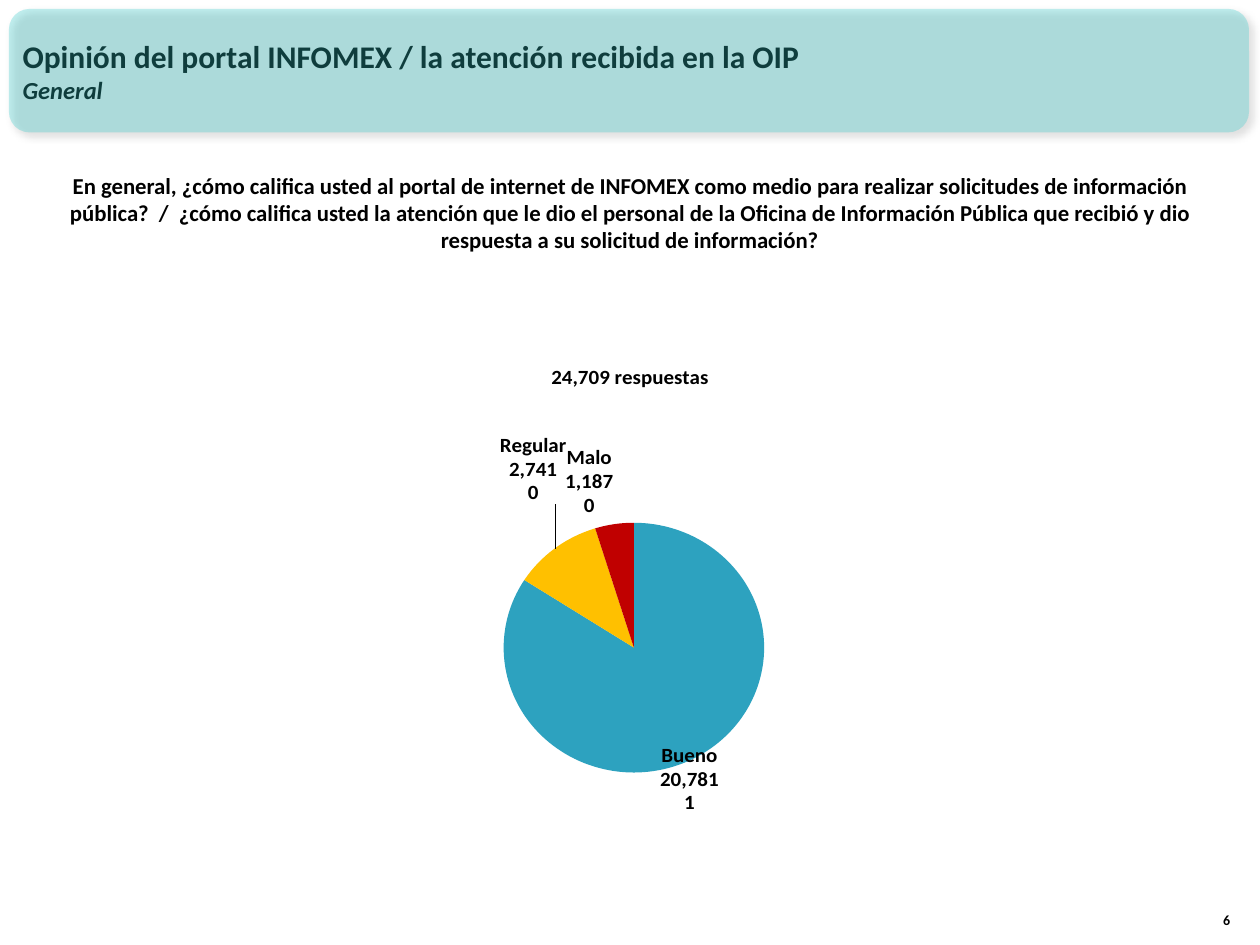
from dataclasses import dataclass

from lxml import etree
from pptx import Presentation
from pptx.chart.data import CategoryChartData
from pptx.dml.color import RGBColor
from pptx.enum.chart import XL_CHART_TYPE, XL_LABEL_POSITION
from pptx.enum.shapes import MSO_SHAPE
from pptx.enum.text import MSO_ANCHOR, PP_ALIGN
from pptx.oxml import parse_xml
from pptx.oxml.ns import nsdecls, qn
from pptx.util import Cm, Pt

PIE = XL_CHART_TYPE.PIE
OUTSIDE = XL_LABEL_POSITION.OUTSIDE_END
ROUNDED = MSO_SHAPE.ROUNDED_RECTANGLE
MIDDLE, TOP, BOTTOM = MSO_ANCHOR.MIDDLE, MSO_ANCHOR.TOP, MSO_ANCHOR.BOTTOM
LEFT, CENTER, RIGHT = PP_ALIGN.LEFT, PP_ALIGN.CENTER, PP_ALIGN.RIGHT


@dataclass(frozen=True)
class Theme:
    font: str = "Calibri"
    text: str = "000000"
    banner: str = "33CCCC"
    title: int = 18
    subtitle: int = 14
    question: int = 13
    chart: int = 12
    page: int = 8


@dataclass(frozen=True)
class Box:
    left: float
    top: float
    width: float
    height: float

    def lengths(self) -> tuple:
        return Cm(self.left), Cm(self.top), Cm(self.width), Cm(self.height)


@dataclass(frozen=True)
class Rating:
    name: str
    count: int
    color: str
    shift: tuple = (0, 0)


THEME = Theme()
RATINGS = [
    Rating("Bueno", 20781, "2DA2BF", (-0.05, -0.03)),
    Rating("Regular", 2741, "FFC000", (0.02, -0.08)),
    Rating("Malo", 1187, "C00000"),
]
ANSWERS = "24,709 respuestas"
QUESTION = (
    "En general, ¿cómo califica usted al portal de internet de INFOMEX como medio "
    "para realizar solicitudes de información pública?  /  ¿cómo califica usted la "
    "atención que le dio el personal de la Oficina de Información Pública que recibió "
    "y dio respuesta a su solicitud de información?"
)


def style_font(font, size: int, italic: bool = False) -> None:
    font.name, font.size = THEME.font, Pt(size)
    font.bold, font.italic = True, italic
    font.color.rgb = RGBColor.from_string(THEME.text)


def write_line(p, text: str, size: int, align, italic: bool = False) -> None:
    p.text, p.alignment = text, align
    style_font(p.font, size, italic)


def add_banner(s, box: Box) -> None:
    """Draw the translucent header with its soft shadow."""
    sp = s.shapes.add_shape(ROUNDED, *box.lengths())
    sp.line.fill.background()
    sp.fill.solid()
    sp.fill.fore_color.rgb = RGBColor.from_string(THEME.banner)
    color = sp.fill._xPr.find(".//" + qn("a:srgbClr"))
    etree.SubElement(color, qn("a:alpha"), val="30000")
    sp._element.spPr.append(parse_xml(
        f'<a:effectLst {nsdecls("a")}><a:outerShdw blurRad="50800" dist="38100" '
        'dir="2700000" algn="tl" rotWithShape="0"><a:srgbClr val="000000">'
        '<a:alpha val="40000"/></a:srgbClr></a:outerShdw></a:effectLst>'))


def add_title(s, box: Box, title: str, subtitle: str) -> None:
    sp = s.shapes.title
    sp.left, sp.top, sp.width, sp.height = box.lengths()
    tf = sp.text_frame
    tf.word_wrap, tf.vertical_anchor = True, MIDDLE
    write_line(tf.paragraphs[0], title, THEME.title, LEFT)
    write_line(tf.add_paragraph(), subtitle, THEME.subtitle, LEFT, italic=True)


def add_text(s, box: Box, text: str, size: int, align, anchor) -> None:
    tf = s.shapes.add_textbox(*box.lengths()).text_frame
    tf.word_wrap, tf.vertical_anchor = True, anchor
    write_line(tf.paragraphs[0], text, size, align)


def manual_layout(inner: bool = False, **values: float):
    """Build a c:layout; an inner one is placed from the chart's edges."""
    layout = etree.Element(qn("c:layout"))
    manual = etree.SubElement(layout, qn("c:manualLayout"))
    if inner:
        for tag, val in (("layoutTarget", "inner"), ("xMode", "edge"), ("yMode", "edge")):
            etree.SubElement(manual, qn(f"c:{tag}"), val=val)
    for tag, val in values.items():
        etree.SubElement(manual, qn(f"c:{tag}"), val=str(val))
    return layout


def show_parts(label) -> None:
    """Show category, value and percentage, each on its own line."""
    for tag in ("showVal", "showCatName", "showPercent"):
        label.find(qn(f"c:{tag}")).set("val", "1")
    separator = etree.Element(qn("c:separator"))
    separator.text = "\n"
    label.find(qn("c:showBubbleSize")).addnext(separator)


def add_pie(s, box: Box, ratings: list[Rating]) -> None:
    data = CategoryChartData(number_format="#,##0")
    data.categories = [r.name for r in ratings]
    data.add_series(ANSWERS, [r.count for r in ratings])
    chart = s.shapes.add_chart(PIE, *box.lengths(), data).chart
    style_font(chart.font, THEME.chart)
    chart.has_legend = False
    chart.has_title = True
    p = chart.chart_title.text_frame.paragraphs[0]
    write_line(p, ANSWERS, THEME.chart, CENTER)

    plot = chart.plots[0]
    plot.vary_by_categories = True
    area = plot._element.getparent()
    for old in area.findall(qn("c:layout")):
        area.remove(old)
    area.insert(0, manual_layout(True, x=0.23, y=0.38, w=0.55, h=0.53))

    series = plot.series[0]
    labels = series.data_labels
    labels.number_format, labels.number_format_is_linked = "#,##0", False
    labels.position = OUTSIDE
    style_font(labels.font, THEME.chart)
    show_parts(labels._element)
    for i, rating in enumerate(ratings):
        point = series.points[i]
        point.format.fill.solid()
        point.format.fill.fore_color.rgb = RGBColor.from_string(rating.color)
        point.data_label.position = OUTSIDE
        style_font(point.data_label.font, THEME.chart)
        label = labels._element.findall(qn("c:dLbl"))[i]
        show_parts(label)
        if any(rating.shift):
            x, y = rating.shift
            label.find(qn("c:idx")).addnext(manual_layout(x=x, y=y))


def main() -> None:
    prs = Presentation()
    prs.slide_width, prs.slide_height = Cm(25.4), Cm(19.05)
    s = prs.slides.add_slide(prs.slide_layouts[5])
    add_banner(s, Box(0.18, 0.18, 25, 2.49))
    add_title(s, Box(0.2, 0.23, 23.29, 2.39),
              "Opinión del portal INFOMEX / la atención recibida en la OIP", "General")
    add_text(s, Box(0.94, 3.33, 23.5, 1.93), QUESTION, THEME.question, CENTER, TOP)
    add_pie(s, Box(4.7, 6.93, 16, 9.91), RATINGS)
    add_text(s, Box(24.03, 17.81, 1.02, 1.02), "6", THEME.page, RIGHT, BOTTOM)
    prs.save("out.pptx")


if __name__ == "__main__":
    main()
